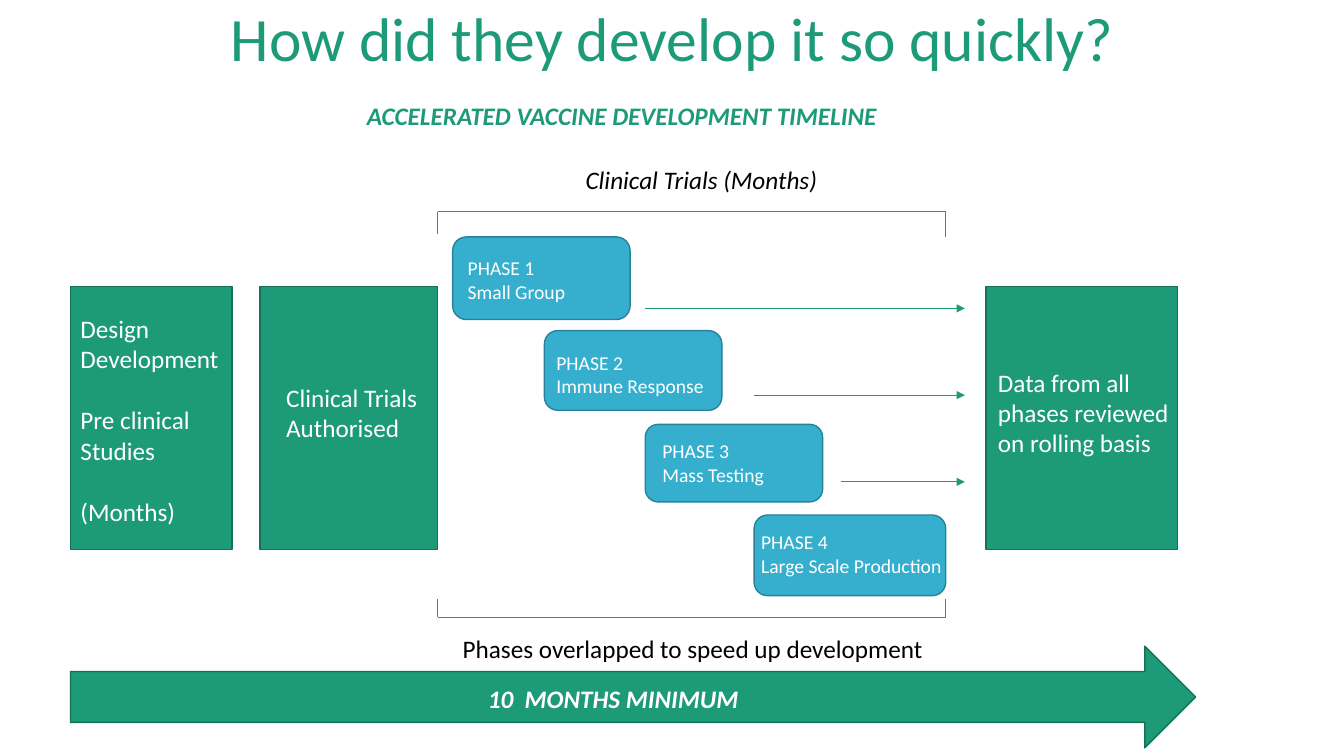
from pptx import Presentation
from pptx.dml.color import RGBColor
from pptx.enum.shapes import MSO_CONNECTOR, MSO_SHAPE
from pptx.enum.text import MSO_ANCHOR, MSO_AUTO_SIZE, PP_ALIGN
from pptx.oxml.ns import qn
from pptx.util import Inches, Pt
from lxml.etree import SubElement

GREEN = RGBColor(0x1D, 0x9A, 0x78)
DARK_GREEN = RGBColor(0x15, 0x72, 0x59)
BLUE = RGBColor(0x36, 0xAF, 0xCE)
DARK_BLUE = RGBColor(0x28, 0x81, 0x98)
BLACK = RGBColor(0, 0, 0)
WHITE = RGBColor(255, 255, 255)

TITLE = "How did they develop it so quickly?"
STAGE_TOP, STAGE_HEIGHT = 2.84, 2.61
STAGES = [(0.7, 1.6), (2.58, 1.76), (9.78, 1.9)]
TIMELINE = (0.7, 6.41, 11.16, 1.01)
BRACKET_LEFT, BRACKET_RIGHT = 4.34, 9.38
BRACKETS = [(2.1, 2.32, 2.35), (6.12, 5.94, 5.94)]
PHASES = [
    ((4.49, 2.35, 1.76, 0.82), (4.54, 2.49, 1.6), ["PHASE 1", "Small Group"]),
    ((5.4, 3.28, 1.76, 0.79), (5.42, 3.43, 1.76), ["PHASE 2", "Immune Response"]),
    ((6.4, 4.21, 1.76, 0.77), (6.47, 4.31, 1.72), ["PHASE 3", "Mass Testing"]),
    ((7.48, 5.11, 1.9, 0.8), (7.45, 5.21, 2.11), ["PHASE 4", "Large Scale Production"]),
]
ARROW_STARTS, ARROW_END = [6.4, 7.48, 8.34], 9.57
ARROW_TOP, ARROW_STEP = 3.06, 0.86
BOLD_ITALIC = {"bold": True, "italic": True}
LABELS = [
    ((3.54, 0.95, 7.36, 0.4), ["ACCELERATED VACCINE DEVELOPMENT TIMELINE"], GREEN, BOLD_ITALIC, 0),
    ((5.71, 1.58, 3.76, 0.4), ["Clinical Trials (Months)"], BLACK, {"italic": True}, 0),
    ((0.7, 3.06, 1.6, 2.22), ["Design\vDevelopment", "Pre clinical Studies", "(Months)"], WHITE, {}, 22),
    ((2.74, 3.74, 1.6, 0.71), ["Clinical Trials", "Authorised"], WHITE, {}, 0),
    ((4.49, 6.23, 5.08, 0.4), ["Phases overlapped to speed up development"], BLACK, {}, 0),
    ((9.8, 3.59, 1.9, 1.01), ["Data from all phases reviewed on rolling basis"], WHITE, {}, 0),
    ((4.74, 6.73, 5.2, 0.4), ["10  MONTHS MINIMUM"], WHITE, BOLD_ITALIC, 0),
]


def style_font(font, size, color, extra):
    """Apply the slide's typeface and the given format values."""
    for name, value in {"name": "Calibri", "size": Pt(size), **extra}.items():
        setattr(font, name, value)
    font.color.rgb = color


def add_box(slide, kind, box, fill, line):
    """Draw a filled preset shape with a thin outline."""
    shape = slide.shapes.add_shape(kind, *map(Inches, box))
    shape.shadow.inherit = False
    shape.fill.solid()
    shape.fill.fore_color.rgb = fill
    shape.line.color.rgb = line
    shape.line.width = Pt(1)


def add_label(slide, box, lines, size, color, extra, gap=0):
    """Write lines as paragraphs in a wrapping text box."""
    frame = slide.shapes.add_textbox(*map(Inches, box)).text_frame
    frame.word_wrap = True
    frame.auto_size = MSO_AUTO_SIZE.SHAPE_TO_FIT_TEXT
    for index, line in enumerate(lines):
        paragraph = frame.paragraphs[0] if index == 0 else frame.add_paragraph()
        paragraph.text = line
        paragraph.space_before = Pt(gap if index else 0)
        for run in paragraph.runs:
            style_font(run.font, size, color, extra)


def add_line(slide, start, end, arrow=False):
    """Draw a thin green line, with an arrowhead at its end if asked."""
    connector = slide.shapes.add_connector(MSO_CONNECTOR.STRAIGHT, *map(Inches, start + end))
    connector.line.color.rgb = GREEN
    connector.line.width = Pt(0.5)
    if arrow:
        SubElement(connector.line._get_or_add_ln(), qn("a:tailEnd"), type="triangle")
    SubElement(connector._element.spPr, qn("a:effectLst"))


def add_title(slide):
    """Place and format the title placeholder."""
    title = slide.shapes.title
    box = {"left": 0.92, "top": -0.04, "width": 11.5, "height": 0.91}
    for name, value in box.items():
        setattr(title, name, Inches(value))
    frame = title.text_frame
    frame.text = TITLE
    frame.auto_size = MSO_AUTO_SIZE.NONE
    frame.vertical_anchor = MSO_ANCHOR.MIDDLE
    paragraph = frame.paragraphs[0]
    paragraph.alignment = PP_ALIGN.CENTER
    paragraph.line_spacing = 0.9
    style_font(paragraph.runs[0].font, 44, GREEN, {})


def main():
    """Build the vaccine timeline slide."""
    presentation = Presentation()
    presentation.slide_width, presentation.slide_height = Inches(13.33), Inches(7.5)
    slide = presentation.slides.add_slide(presentation.slide_layouts[5])
    add_title(slide)

    for left, width in STAGES:
        add_box(slide, MSO_SHAPE.RECTANGLE, (left, STAGE_TOP, width, STAGE_HEIGHT), GREEN, DARK_GREEN)
    add_box(slide, MSO_SHAPE.RIGHT_ARROW, TIMELINE, GREEN, DARK_GREEN)
    for y, left_tip, right_tip in BRACKETS:
        add_line(slide, (BRACKET_LEFT, y), (BRACKET_RIGHT, y))
        add_line(slide, (BRACKET_LEFT, y), (BRACKET_LEFT, left_tip))
        add_line(slide, (BRACKET_RIGHT, y), (BRACKET_RIGHT, right_tip))
    for box, lines, color, extra, gap in LABELS:
        add_label(slide, box, lines, 18, color, extra, gap)

    for box, label_box, lines in PHASES:
        add_box(slide, MSO_SHAPE.ROUNDED_RECTANGLE, box, BLUE, DARK_BLUE)
        add_label(slide, label_box + (0.57,), lines, 14, WHITE, {})
    for index, start in enumerate(ARROW_STARTS):
        y = ARROW_TOP + index * ARROW_STEP
        add_line(slide, (start, y), (ARROW_END, y), arrow=True)

    presentation.save("out.pptx")


if __name__ == "__main__":
    main()
